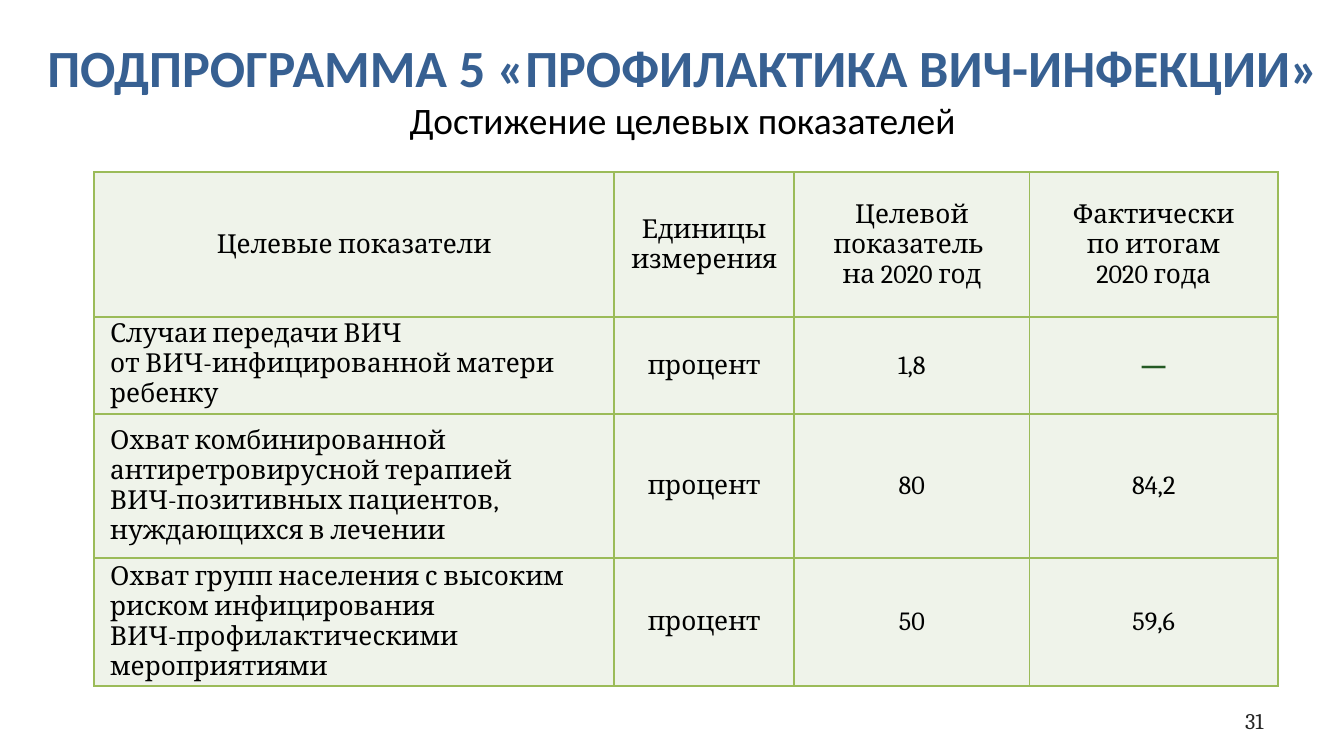
from lxml import etree
from pptx import Presentation
from pptx import util as u
from pptx.dml.color import RGBColor
from pptx.enum import text
from pptx.oxml.ns import qn

GRID = 0.1  # inches per grid column and row
COLORS = {"title": "376092", "text": "000000", "dash": "245A24",
          "number": "262626", "cell": "EFF3EA", "border": "9BBB59"}
ALIGN = text.PP_ALIGN
TOP, MIDDLE = text.MSO_ANCHOR.TOP, text.MSO_ANCHOR.MIDDLE
BODY = {"name": "Cambria", "size": u.Pt(14), "bold": False}

COLUMNS = [38.7, 13.4, 17.5, 18.5]
ROWS = [10.8, 7.1, 10.7, 9.5]
UNIT = "процент"
CELLS = [
    ["Целевые показатели", "Единицы измерения",
     "Целевой показатель \vна 2020 год", "Фактически\v по итогам \v2020 года"],
    ["Случаи передачи ВИЧ\vот ВИЧ-инфицированной матери ребенку", UNIT, "1,8", "—"],
    ["Охват комбинированной антиретровирусной терапией\v"
     "ВИЧ-позитивных пациентов, нуждающихся в лечении", UNIT, "80", "84,2"],
    ["Охват групп населения с высоким риском инфицирования \v"
     "ВИЧ-профилактическими мероприятиями", UNIT, "50", "59,6"],
]


def grid(*steps):
    return [u.Inches(step * GRID) for step in steps]


def apply(target, values):
    for name, value in values.items():
        setattr(target, name, value)


def write(para, words, align, color, font):
    para.text = words
    para.alignment = align
    for span in para.runs:
        apply(span.font, font)
        span.font.color.rgb = RGBColor.from_string(COLORS[color])
    # Line breaks carry their own size, which sets the line height.
    for line_break in para._p.findall(qn("a:br")):
        etree.SubElement(line_break, qn("a:rPr"), sz=str(int(font["size"].pt * 100)))


def add_box(page, place, anchor):
    frame = page.shapes.add_textbox(*grid(*place)).text_frame
    apply(frame, {"word_wrap": True, "vertical_anchor": anchor})
    return frame


def add_title(page):
    frame = add_box(page, (1.6, 2.1, 98.4, 9.1), TOP)
    write(frame.paragraphs[0], "ПОДПРОГРАММА 5 «ПРОФИЛАКТИКА ВИЧ-ИНФЕКЦИИ»", ALIGN.CENTER,
          "title", {"name": "Calibri", "size": u.Pt(28), "bold": True})
    write(frame.add_paragraph(), "Достижение целевых показателей", ALIGN.CENTER,
          "text", {"name": "Calibri", "size": u.Pt(20), "bold": False})


def add_borders(cell):
    properties = cell._tc.get_or_add_tcPr()
    for index, side in enumerate(("lnL", "lnR", "lnT", "lnB")):
        line = etree.Element(qn(f"a:{side}"), w=str(int(u.Pt(1))))
        fill = etree.SubElement(line, qn("a:solidFill"))
        etree.SubElement(fill, qn("a:srgbClr"), val=COLORS["border"])
        properties.insert(index, line)


def fill_cell(cell, words, is_label, anchor):
    margin = u.Inches(0.01)
    apply(cell, {"margin_left": u.Inches(0.12) if is_label else margin,
                 "margin_right": margin, "margin_top": margin,
                 "margin_bottom": margin, "vertical_anchor": anchor})
    cell.fill.solid()
    cell.fill.fore_color.rgb = RGBColor.from_string(COLORS["cell"])
    add_borders(cell)
    is_dash = words == "—"
    write(cell.text_frame.paragraphs[0], words, ALIGN.LEFT if is_label else ALIGN.CENTER,
          "dash" if is_dash else "text", {**BODY, "bold": is_dash})


def add_indicators(page):
    place = grid(7, 12.8, sum(COLUMNS), sum(ROWS))
    table = page.shapes.add_table(len(ROWS), len(COLUMNS), *place).table
    apply(table, {"first_row": False, "horz_banding": False})
    for column, width in zip(table.columns, grid(*COLUMNS)):
        column.width = width
    for row, height in zip(table.rows, grid(*ROWS)):
        row.height = height
    for r, row_words in enumerate(CELLS):
        for c, words in enumerate(row_words):
            fill_cell(table.cell(r, c), words, is_label=r > 0 and c == 0,
                      anchor=TOP if (r, c) == (1, 0) else MIDDLE)


def add_page_number(page):
    frame = add_box(page, (71.7, 52.1, 23.3, 3), MIDDLE)
    write(frame.paragraphs[0], "31", ALIGN.RIGHT, "number", {**BODY, "size": u.Pt(12)})


def main():
    deck = Presentation()
    deck.slide_width, deck.slide_height = grid(100, 56.25)
    page = deck.slides.add_slide(deck.slide_layouts[6])
    add_title(page)
    add_indicators(page)
    add_page_number(page)
    deck.save("out.pptx")


if __name__ == "__main__":
    main()
